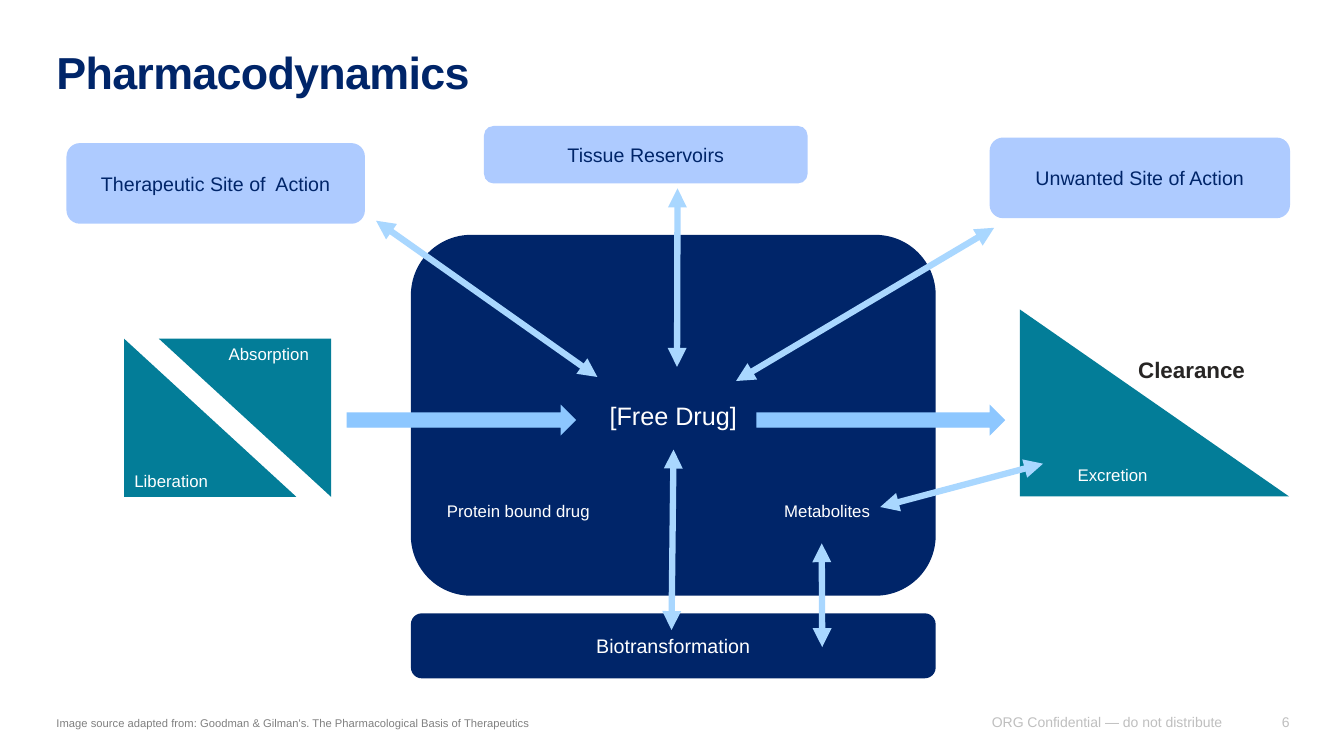
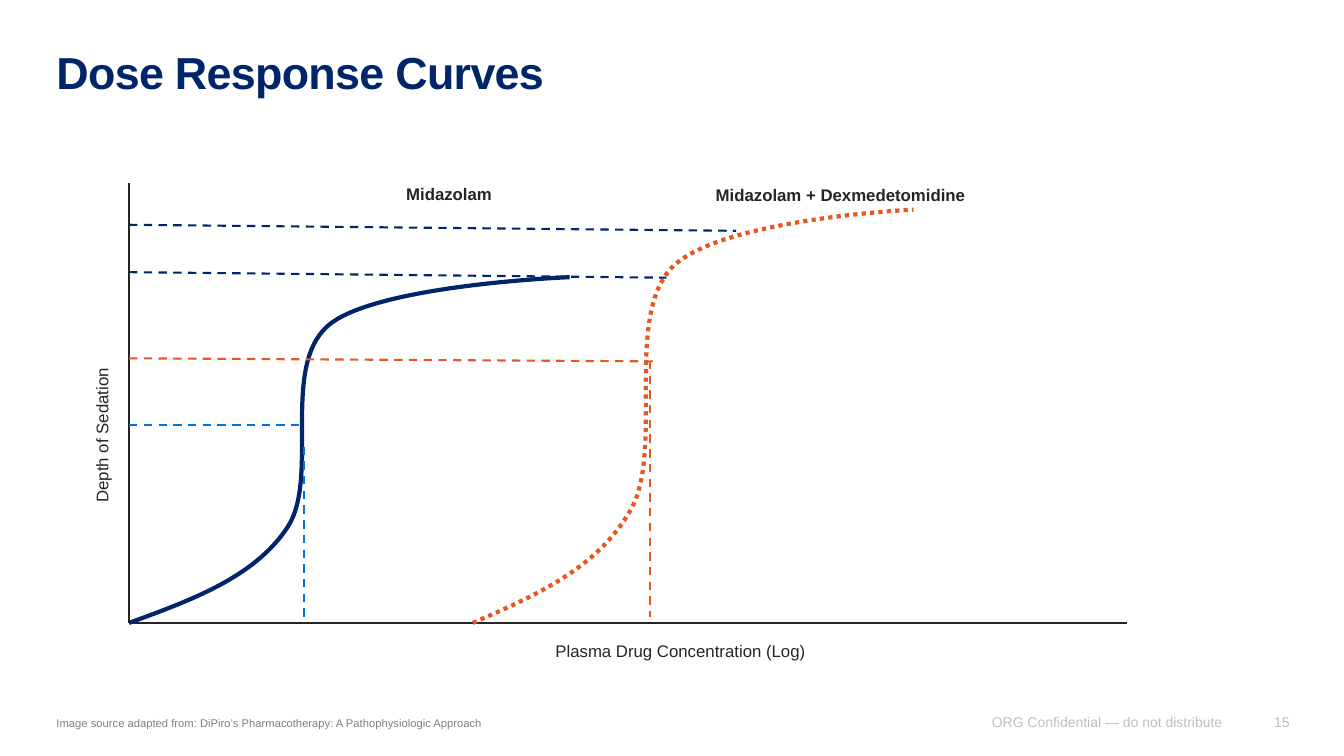
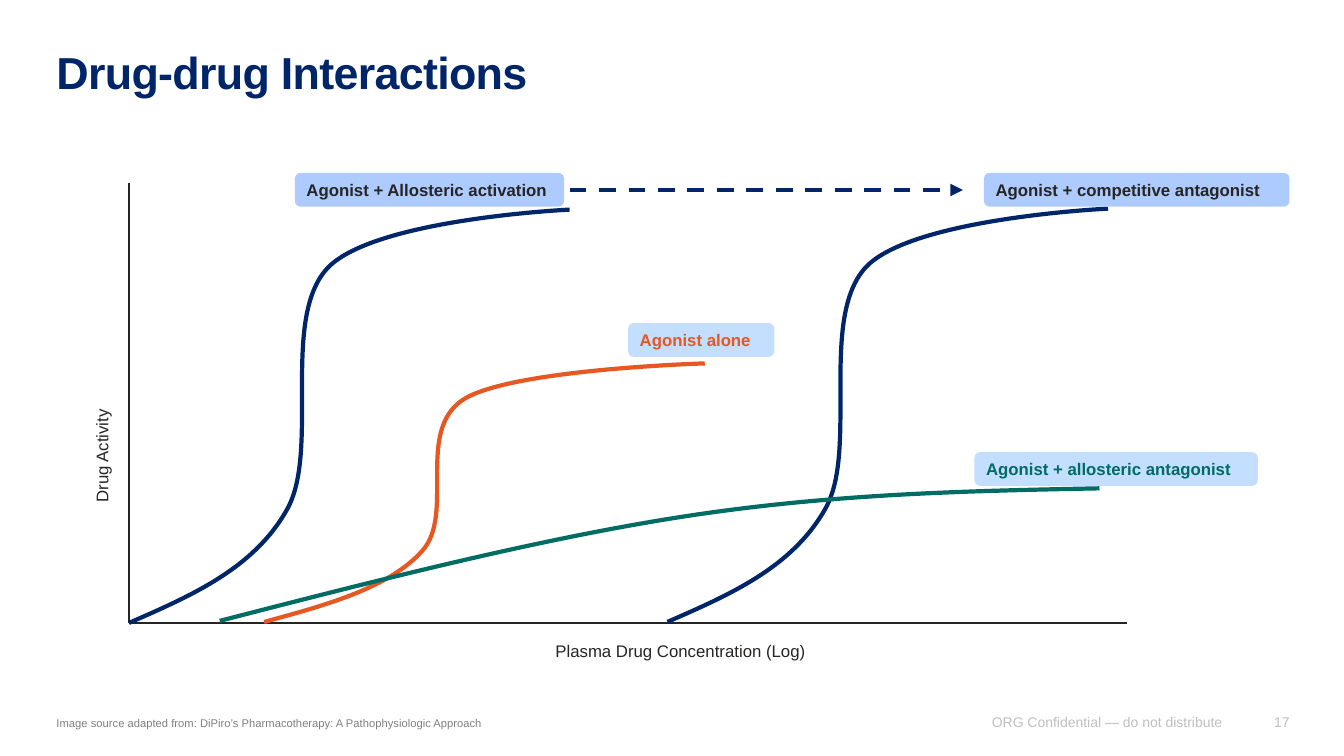
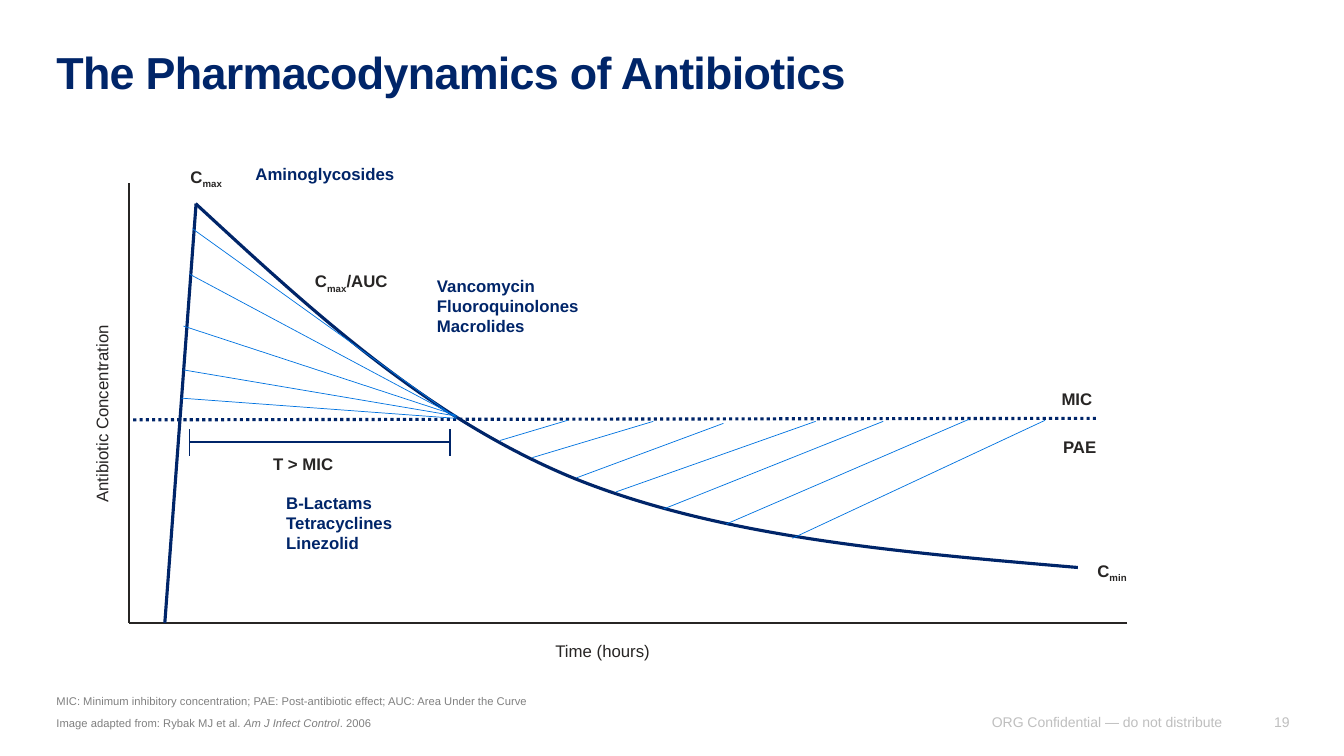
from lxml.etree import SubElement
from pptx import Presentation
from pptx.dml.color import RGBColor
from pptx.enum.dml import MSO_LINE as DASH
from pptx.enum.shapes import MSO_CONNECTOR, MSO_SHAPE as SHAPE
from pptx.enum.text import MSO_ANCHOR as ANCHOR, PP_ALIGN as ALIGN
from pptx.oxml.ns import qn
from pptx.util import Inches, Pt

NAVY = RGBColor(0x00, 0x25, 0x69)
INK = RGBColor(0x27, 0x25, 0x24)
WHITE = RGBColor(0xFF, 0xFF, 0xFF)
GREY = RGBColor(0x80, 0x80, 0x80)
PALE_GREY = RGBColor(0xBF, 0xBF, 0xBF)
PERIWINKLE = RGBColor(0xAE, 0xCB, 0xFF)
ICE = RGBColor(0xC3, 0xDE, 0xFF)
SKY = RGBColor(0x8D, 0xC7, 0xFF)
PALE_SKY = RGBColor(0xA9, 0xD7, 0xFF)
BLUE = RGBColor(0x00, 0x73, 0xE0)
TEAL = RGBColor(0x03, 0x7D, 0x98)
GREEN = RGBColor(0x00, 0x6C, 0x64)
ORANGE = RGBColor(0xE6, 0x57, 0x22)

deck = Presentation()
deck.slide_width, deck.slide_height = Inches(13.33), Inches(7.5)
CELL = deck.slide_height / 75  # square grid, 75 rows high

SUB = {"baseline": "-25000"}
C_MAX = [("C", {}), ("max", SUB)]


def box(slide, at, lines=(), size=12, color=INK, bold=False, kind=None, fill=None,
        border=None, rotation=0, anchor=None, inset=None, **paragraph_format):
    """Put a text box or filled shape on the grid; a line is a string or (text, attributes) runs."""
    place = [int(v * CELL) for v in at]
    if kind is None:
        part = slide.shapes.add_textbox(*place)
    else:
        part = slide.shapes.add_shape(kind, *place)
        part.shadow.inherit = False
        part.fill.solid()
        part.fill.fore_color.rgb = fill
        if border is None:
            part.line.fill.background()
        else:
            part.line.color.rgb, part.line.width = border, Pt(1)
            SubElement(part.element.spPr.find(qn("a:ln")), qn("a:miter")).set("lim", "800000")
    part.rotation = rotation
    frame = part.text_frame
    frame.word_wrap = True
    if anchor is not None:
        frame.vertical_anchor = anchor
    if inset is not None:
        for side in ("left", "top", "right", "bottom"):
            setattr(frame, f"margin_{side}", inset)
    for index, runs in enumerate(lines):
        paragraph = frame.add_paragraph() if index else frame.paragraphs[0]
        for key, value in ({"alignment": ALIGN.LEFT} | paragraph_format).items():
            setattr(paragraph, key, value)
        for text, attributes in [(runs, {})] if isinstance(runs, str) else runs:
            run = paragraph.add_run()
            run.text = text
            for key, value in {"name": "Arial", "size": Pt(size), "bold": bold}.items():
                setattr(run.font, key, value)
            run.font.color.rgb = color
            for key, value in attributes.items():
                run._r.get_or_add_rPr().set(key, value)


def line(slide, ends, color, width, dash=None, arrows=()):
    """Draw a straight line between two grid points."""
    link = slide.shapes.add_connector(MSO_CONNECTOR.STRAIGHT, *[int(v * CELL) for v in ends])
    link.line.color.rgb, link.line.width = color, Pt(width)
    if dash is not None:
        link.line.dash_style = dash
    outline = link.element.spPr.find(qn("a:ln"))
    for end in arrows:
        SubElement(outline, qn(f"a:{end}")).set("type", "triangle")
    SubElement(link.element.spPr, qn("a:effectLst"))


# Frame of every slide: title, source, footer and, for graphs, the axes
TEXTBOOK = "Image source adapted from: DiPiro’s Pharmacotherapy: A Pathophysiologic Approach"
CONCENTRATION = "Plasma Drug Concentration (Log)"
frames = [
    ("Pharmacodynamics", "6", None,
     ["Image source adapted from: Goodman & Gilman's. The Pharmacological Basis of Therapeutics"]),
    ("Dose Response Curves", "15", ("Depth of Sedation", CONCENTRATION), [TEXTBOOK]),
    ("Drug-drug Interactions", "17", ("Drug Activity", CONCENTRATION), [TEXTBOOK]),
    ("The Pharmacodynamics of Antibiotics", "19", ("Antibiotic Concentration", "Time (hours)"),
     ["MIC: Minimum inhibitory concentration; PAE: Post-antibiotic effect; AUC: Area Under the Curve",
      [("Image adapted from: Rybak MJ et al. ", {}), ("Am J Infect Control", {"i": "1"}),
       (". 2006", {})]]),
]
LEFT, TOP, RIGHT, BASE = 12.8, 18.2, 111.8, 61.8
for title, number, axes, source in frames:
    slide = deck.slides.add_slide(deck.slide_layouts[6])
    box(slide, (5.6, 5, 122.3, 6.1), [[(title, {"spc": "-50"})]], 32, NAVY, True,
        inset=0, line_spacing=0.9)
    height = 2.7 if len(source) == 1 else 4.4
    box(slide, (5.6, 72.4 - height, 48.5, height), source, 8, GREY, anchor=ANCHOR.BOTTOM,
        inset=0, space_after=Pt(6))
    for left, width, text in ((96.7, 24.5, "ORG Confidential — do not distribute"),
                              (122.9, 5, number)):
        box(slide, (left, 69.8, width, 2.7), [text], 10, PALE_GREY, anchor=ANCHOR.BOTTOM,
            inset=0, alignment=ALIGN.RIGHT)
    if axes:
        line(slide, (LEFT, TOP, LEFT, BASE), INK, 1.5)
        line(slide, (RIGHT, BASE, LEFT, BASE), INK, 1.5)
        box(slide, (-0.4, 38.85, 21, 3), [axes[0]], rotation=270)
        box(slide, (54.1, 63.1, 31.8, 3), [axes[1]])
disposition, dose_response, interactions, antibiotics = deck.slides

# Curves: Bezier control points in percent of width and rise
SIGMOID = [(0, 0), (14.2, 6.6), (28.4, 13.2), (35.9, 27.5), (43.4, 41.8),
           (34.3, 73.7), (45.1, 85.9), (55.7, 97.8), (100, 100), (100, 100)]
PLATEAU = [(0, 0), (18.3, 31.3), (36.7, 62.6), (53.4, 79.4),
           (70, 96), (85, 98), (100, 100)]
DECAY = [(0, 0), (13, 29.1), (26, 58.4), (42.5, 75.1),
         (59.2, 91.7), (79.7, 95.8), (100, 100)]
curves = [
    (dose_response, SIGMOID, LEFT, BASE, 43.7, 34.3, NAVY, 3, None),
    (dose_response, SIGMOID, 46.9, BASE, 43.7, 41, ORANGE, 3, DASH.ROUND_DOT),
    (interactions, SIGMOID, LEFT, BASE, 43.7, 41, NAVY, 3, None),
    (interactions, SIGMOID, 26.2, 61.7, 43.7, 25.65, ORANGE, 3, None),
    (interactions, SIGMOID, 66.2, 61.7, 43.7, 41, NAVY, 3, None),
    (interactions, PLATEAU, 21.8, 61.6, 87.25, 13.15, GREEN, 3, None),
    (antibiotics, DECAY, 19.4, 20.2, 87.5, -36.1, NAVY, 2.25, None),
]
for slide, controls, left, base, width, rise, color, weight, dash in curves:
    points = [((left + x * width / 100) * CELL, (base - y * rise / 100) * CELL)
              for x, y in controls]
    builder = slide.shapes.build_freeform(*points[0])
    builder.add_line_segments(points[1:], close=False)
    curve = builder.convert_to_shape()
    curve.shadow.inherit = False
    curve.fill.background()
    curve.line.color.rgb, curve.line.width = color, Pt(weight)
    if dash is not None:
        curve.line.dash_style = dash
    # Turn each three straight segments into one Bezier segment
    outline = curve.element.spPr.find(".//" + qn("a:path"))
    segments = outline.findall(qn("a:lnTo"))
    for first in range(0, len(segments), 3):
        bend = SubElement(outline, qn("a:cubicBezTo"))
        for segment in segments[first:first + 3]:
            bend.append(segment[0])
            outline.remove(segment)

# Pharmacodynamics: compartments
for at, text, size, color, fill in (
    ((40.75, 23.3, 52.05, 35.8), "[Free Drug]", 18, WHITE, NAVY),
    ((6.6, 14.2, 29.6, 8), "Therapeutic Site of  Action", 14, NAVY, PERIWINKLE),
    ((48, 12.5, 32.1, 5.7), "Tissue Reservoirs", 14, NAVY, PERIWINKLE),
    ((98.15, 13.65, 29.8, 8), "Unwanted Site of Action", 14, NAVY, PERIWINKLE),
    ((40.75, 60.85, 52.05, 6.45), "Biotransformation", 14, WHITE, NAVY),
):
    box(disposition, at, [text], size, color, kind=SHAPE.ROUNDED_RECTANGLE, fill=fill,
        alignment=ALIGN.CENTER)
for at, rotation in (((12.3, 33.6, 17.1, 15.7), 0), ((15.75, 33.6, 17.1, 15.7), 180),
                     ((101.15, 30.7, 26.7, 18.55), 0)):
    box(disposition, at, kind=SHAPE.RIGHT_TRIANGLE, fill=TEAL, rotation=rotation)

# Pharmacodynamics: flows and exchanges
for left, width in ((34.45, 22.6), (75.1, 24.5)):
    box(disposition, (left, 40.3, width, 2.75), kind=SHAPE.RIGHT_ARROW, fill=SKY, border=SKY)
for ends in ((98.6, 22.6, 73, 37.8), (66.8, 44.6, 66.6, 62.5), (81.5, 53.9, 81.55, 64.2),
             (103.45, 46, 87.3, 50.3), (67.2, 18.7, 67.15, 36.4), (59.25, 37.4, 37.3, 21.9)):
    line(disposition, ends, PALE_SKY, 4.5, arrows=("headEnd", "tailEnd"))
for left, top, width, text in ((43.35, 49.2, 17, "Protein bound drug"),
                               (76.8, 49.2, 11, "Metabolites"),
                               (12.35, 46.25, 10, "Liberation"),
                               (21.7, 33.6, 13, "Absorption"),
                               (105.9, 45.6, 10, "Excretion")):
    box(disposition, (left, top, width, 3), [text], color=WHITE)
box(disposition, (111.9, 34.8, 16.8, 3.7), ["Clearance"], 16, bold=True)

# Dose response: reading lines and curve names
for ends, color in (((LEFT, 42.2, 30.2, 42.2), BLUE), ((30.15, 44.3, 30.15, BASE), BLUE),
                    ((LEFT, 35.55, 64.8, 35.85), ORANGE), ((64.45, 35.8, 64.45, 61.2), ORANGE),
                    ((LEFT, 22.3, 73, 22.9), NAVY), ((LEFT, 27, 66.1, 27.55), NAVY)):
    line(dose_response, ends, color, 1.5, DASH.DASH)
for left, top, width, text in ((39.3, 17.75, 17.2, "Midazolam"),
                               (70, 17.8, 31.8, "Midazolam + Dexmedetomidine")):
    box(dose_response, (left, top, width, 3), [text], bold=True)

# Interactions: curve labels and shift arrow
for left, top, width, text, color, fill in (
    (29.25, 17.15, 26.7, "Agonist + Allosteric activation", INK, PERIWINKLE),
    (62.3, 32.05, 14.5, "Agonist alone", ORANGE, ICE),
    (97.6, 17.15, 30.3, "Agonist + competitive antagonist", INK, PERIWINKLE),
    (96.65, 44.85, 28.1, "Agonist + allosteric antagonist", GREEN, ICE),
):
    box(interactions, (left, top, width, 3.35), [text], color=color, bold=True,
        kind=SHAPE.ROUNDED_RECTANGLE, fill=fill)
line(interactions, (56.5, 18.85, 95.5, 18.85), NAVY, 3, DASH.DASH, ("tailEnd",))

# Antibiotics: absorption, MIC threshold and time above it
line(antibiotics, (19.45, 20.2, 16.35, BASE), NAVY, 2.25)
line(antibiotics, (108.7, 41.5, 13, 41.65), NAVY, 2.25, DASH.ROUND_DOT)
line(antibiotics, (18.8, 43.85, 44.65, 43.85), NAVY, 1)
for end in (18.8, 44.65):
    line(antibiotics, (end, 45.2, end, 42.55), NAVY, 1)

# Antibiotics: hatching above and below the threshold
for ends in ((19.1, 22.7, 45.3, 41.5), (18.8, 27.2, 45.2, 41.3), (18.2, 32.35, 45.2, 41.2),
             (18.2, 36.7, 45.4, 41.3), (18, 39.5, 45.2, 41.5),
             (49.6, 43.7, 56.3, 41.7), (52.8, 45.4, 64.8, 41.8), (57.2, 47.4, 71.75, 42),
             (61.1, 48.8, 80.9, 41.8), (65.8, 50.5, 87.6, 41.8), (72, 52, 96.1, 41.6),
             (78.6, 53.4, 103.65, 41.7)):
    line(antibiotics, ends, BLUE, 0.5)

# Antibiotics: measures in dark ink, drug classes in navy
for left, top, lines, color in (
    (104.3, 38.1, ["MIC"], INK),
    (104.45, 42.8, ["PAE"], INK),
    (17.9, 16.05, [C_MAX], INK),
    (30.25, 26.4, [C_MAX + [("/AUC", {})]], INK),
    (26.1, 44.5, ["T > MIC"], INK),
    (107.85, 55.1, [[("C", {}), ("min", SUB)]], INK),
    (24.35, 15.75, ["Aminoglycosides"], NAVY),
    (42.35, 26.85, ["Vancomycin", "Fluoroquinolones", "Macrolides"], NAVY),
    (27.4, 48.4, ["B-Lactams", "Tetracyclines", "Linezolid"], NAVY),
):
    box(antibiotics, (left, top, 17.2, 1 + 2 * len(lines)), lines, color=color, bold=True)

deck.save("out.pptx")
